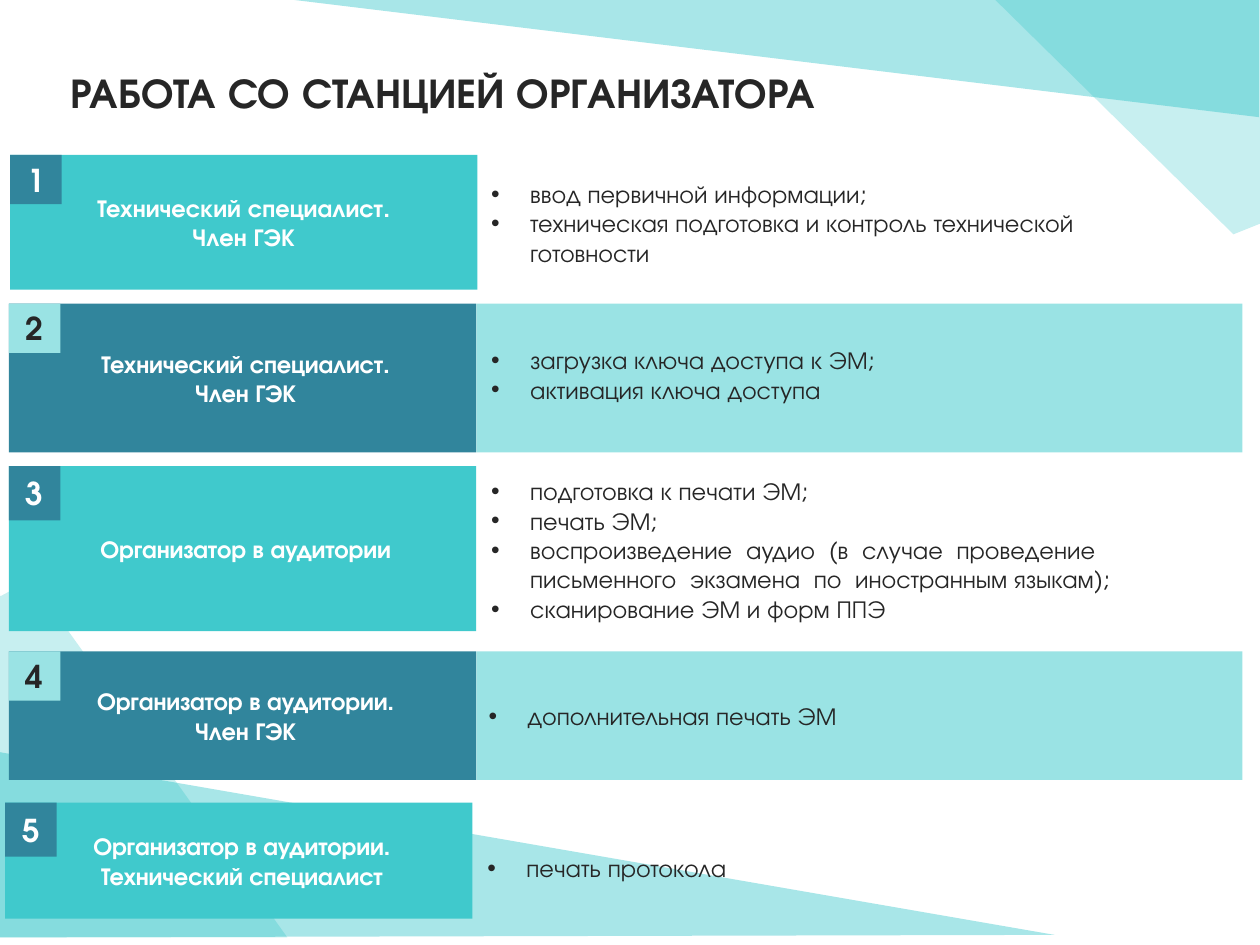
"""Build the slide on the five steps of work with the organiser station."""
from dataclasses import dataclass
from typing import NamedTuple, Optional

import pptx
import pptx.dml.color
import pptx.enum.shapes
import pptx.enum.text
import pptx.oxml.ns
import pptx.util
from lxml import etree

Inches, Pt = pptx.util.Inches, pptx.util.Pt
RGBColor = pptx.dml.color.RGBColor
PP_ALIGN = pptx.enum.text.PP_ALIGN
MIDDLE = pptx.enum.text.MSO_ANCHOR.MIDDLE
RECT = pptx.enum.shapes.MSO_SHAPE.RECTANGLE
qn = pptx.oxml.ns.qn

TEAL = RGBColor(0x20, 0xC0, 0xC4)
TURQUOISE = RGBColor(0x40, 0xC9, 0xCC)
BLUE = RGBColor(0x31, 0x85, 0x9C)
PALE = RGBColor(0x9A, 0xE3, 0xE4)
DARK = RGBColor(0x26, 0x26, 0x26)
WHITE = RGBColor(0xFF, 0xFF, 0xFF)

FONT = "TeX Gyre Adventor"
TITLE_FONT = {"name": FONT, "size": Pt(24), "bold": True}
BADGE_FONT = {"name": FONT, "size": Pt(18), "bold": True}
LABEL_FONT = {"name": FONT, "size": Pt(14), "bold": True}
TASK_FONT = {"name": FONT, "size": Pt(14), "bold": False}

LABEL_W, BADGE_W = 3.71, 0.41
PANEL_X, PANEL_W = 3.78, 6.08


class Box(NamedTuple):
    """Position and size in inches."""
    x: float
    y: float
    w: float
    h: float


class Facet(NamedTuple):
    """A translucent background polygon with its opacity in percent."""
    points: list[tuple[float, float]]
    opacity: int


@dataclass
class Step:
    """One numbered row; its tasks go into the panel when they have no area."""
    roles: list[str]
    tasks: list[str]
    x: float
    y: float
    h: float
    badge_h: float
    area: Optional[Box] = None
    tight: bool = True


FACETS = [
    Facet([(2.17, -0.02), (9.99, 0.93), (9.99, -0.03)], 39),
    Facet([(10.04, 1.76), (9.79, 1.86), (7.9, 0), (10.03, 0), (10.03, 1.78)], 25),
    Facet([(8.37, 7.42), (0, 5.97), (0, 7.44)], 39),
    Facet([(-0.01, 4.74), (0.25, 4.6), (2.28, 7.44), (0, 7.44), (0, 4.72)], 25),
]

STEPS = [
    Step(["Технический специалист.", "Член ГЭК"],
         ["ввод первичной информации;",
          "техническая подготовка и контроль технической готовности"],
         0.08, 1.23, 1.07, 0.39, Box(3.8, 1.37, 5.46, 0.81), tight=False),
    Step(["Технический специалист.", "Член ГЭК"],
         ["загрузка ключа доступа к ЭМ;", "активация ключа доступа"],
         0.07, 2.41, 1.18, 0.39, Box(3.8, 2.69, 5.96, 0.57)),
    Step(["Организатор в аудитории"],
         ["подготовка к печати ЭМ;", "печать ЭМ;",
          "воспроизведение  аудио  (в  случае  проведение  письменного  "
          "экзамена  по  иностранным языкам);",
          "сканирование ЭМ и форм ППЭ"],
         0.07, 3.7, 1.31, 0.43, Box(3.8, 3.73, 5.87, 1.28)),
    Step(["Организатор в аудитории.", "Член ГЭК"],
         ["дополнительная печать ЭМ"],
         0.07, 5.17, 1.02, 0.39),
    Step(["Организатор в аудитории.", "Технический специалист"],
         ["печать протокола"],
         0.04, 6.37, 0.92, 0.43, Box(3.77, 6.72, 5.87, 0.34)),
]


def write(sp, lines: list[str], fmt: dict, color: RGBColor, align=PP_ALIGN.CENTER) -> None:
    """Fill a shape with one formatted paragraph per line."""
    tf = sp.text_frame
    tf.word_wrap = True
    for i, line in enumerate(lines):
        p = tf.paragraphs[0] if i == 0 else tf.add_paragraph()
        p.alignment = align
        r = p.add_run()
        r.text = line
        for key, value in fmt.items():
            setattr(r.font, key, value)
        r.font.color.rgb = color


def add_rect(s, box: Box, fill: RGBColor):
    """Add a flat rectangle with middle-anchored text."""
    sp = s.shapes.add_shape(RECT, *map(Inches, box))
    sp.shadow.inherit = False
    sp.fill.solid()
    sp.fill.fore_color.rgb = fill
    sp.line.fill.background()
    sp.text_frame.vertical_anchor = MIDDLE
    return sp


def add_facet(s, facet: Facet) -> None:
    """Draw a translucent polygon."""
    points = [(Inches(x), Inches(y)) for x, y in facet.points]
    builder = s.shapes.build_freeform(*points[0])
    builder.add_line_segments(points[1:], close=True)
    sp = builder.convert_to_shape()
    sp.shadow.inherit = False
    sp.fill.solid()
    sp.fill.fore_color.rgb = TEAL
    sp.line.fill.background()
    clr = sp.element.spPr.find(qn("a:solidFill")).find(qn("a:srgbClr"))
    etree.SubElement(clr, qn("a:alpha")).set("val", str(facet.opacity * 1000))


def add_tasks(sp, tasks: list[str]) -> None:
    """Write bulleted tasks with a hanging indent."""
    write(sp, tasks, TASK_FONT, DARK, PP_ALIGN.LEFT)
    for p in sp.text_frame.paragraphs:
        pPr = p._p.get_or_add_pPr()
        pPr.set("marL", str(Inches(0.31)))
        pPr.set("indent", str(-Inches(0.31)))
        etree.SubElement(pPr, qn("a:buFont")).set("typeface", "Arial")
        etree.SubElement(pPr, qn("a:buChar")).set("char", "•")


def add_step(s, number: int, step: Step) -> None:
    """Draw one row: panel, role label, number badge and tasks."""
    banded = number % 2 == 0
    if banded:
        target = add_rect(s, Box(PANEL_X, step.y, PANEL_W, step.h), PALE)
    label = add_rect(s, Box(step.x, step.y, LABEL_W, step.h), BLUE if banded else TURQUOISE)
    write(label, step.roles, LABEL_FONT, WHITE)
    if step.tight:
        for p in label.text_frame.paragraphs:
            p._p.get_or_add_pPr().set("marL", str(Inches(0.05)))
            p.runs[0]._r.get_or_add_rPr().set("spc", "-10")
    if step.area:
        target = s.shapes.add_textbox(*map(Inches, step.area))
    add_tasks(target, step.tasks)
    badge = add_rect(s, Box(step.x, step.y, BADGE_W, step.badge_h), PALE if banded else BLUE)
    write(badge, [str(number)], BADGE_FONT, DARK if banded else WHITE)


def main() -> None:
    """Create and save the presentation."""
    prs = pptx.Presentation()
    prs.slide_width, prs.slide_height = Inches(10), Inches(7.5)
    s = prs.slides.add_slide(prs.slide_layouts[5])
    title = s.shapes.title
    title.left, title.top, title.width, title.height = map(Inches, Box(-0.04, 0.15, 7.11, 1.16))
    title.text_frame.vertical_anchor = MIDDLE
    write(title, ["РАБОТА СО СТАНЦИЕЙ ОРГАНИЗАТОРА"], TITLE_FONT, DARK)
    for facet in FACETS:
        add_facet(s, facet)
    for number, step in enumerate(STEPS, 1):
        add_step(s, number, step)
    prs.save("out.pptx")


if __name__ == "__main__":
    main()
